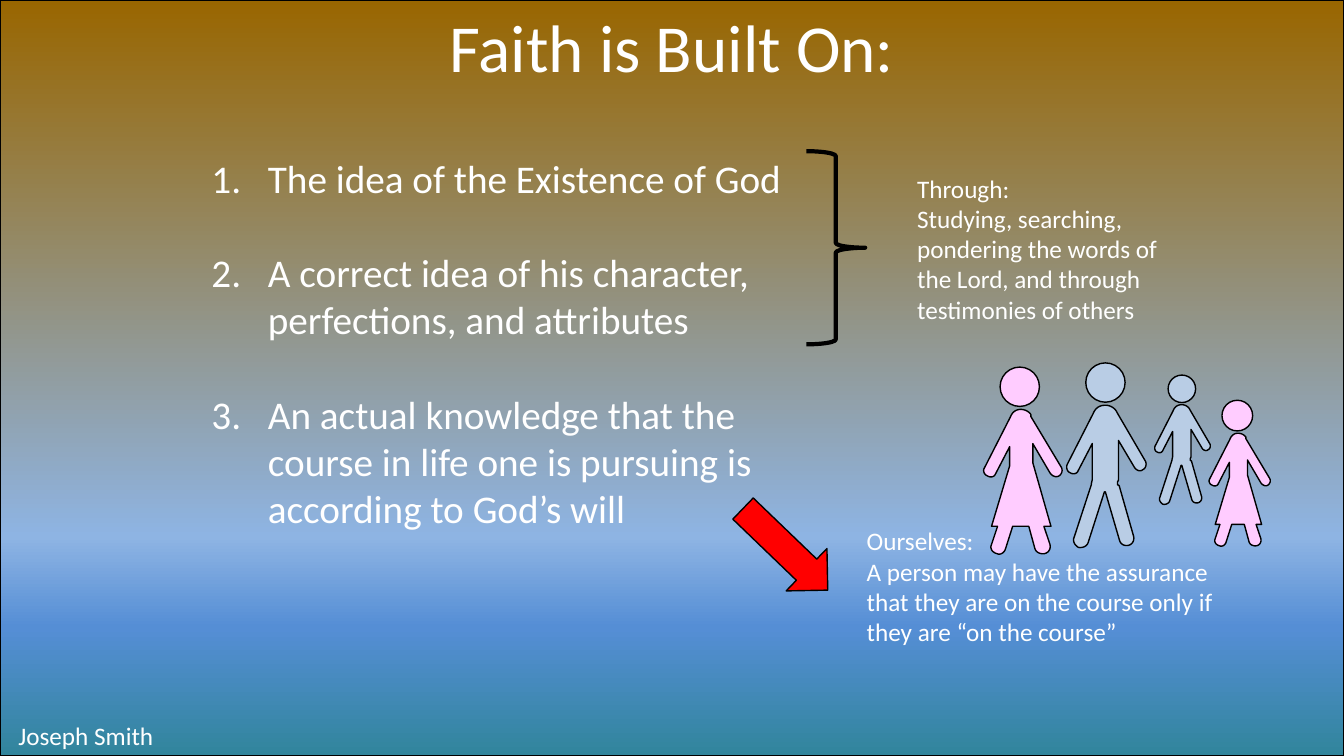
"""Build the slide on what faith is built on, laid out on a grid of 160 by 90 cells."""
from dataclasses import dataclass

from lxml.etree import SubElement
from pptx import Presentation
from pptx.dml.color import RGBColor
from pptx.enum.shapes import MSO_SHAPE
from pptx.enum.text import PP_ALIGN
from pptx.oxml.ns import qn
from pptx.shapes.autoshape import Shape
from pptx.shapes.shapetree import GroupShapes, SlideShapes
from pptx.util import Emu, Inches, Pt

COLS, ROWS = 160, 90
CELL = Inches(7.5) / ROWS
UNIT = 0.12
STEPS = 8
FONT = "Calibri"

WHITE = RGBColor(0xFF, 0xFF, 0xFF)
BLACK = RGBColor(0x00, 0x00, 0x00)
RED = RGBColor(0xFF, 0x00, 0x00)
PINK = RGBColor(0xFF, 0xCC, 0xFF)
PALE = RGBColor(0xB9, 0xCD, 0xE5)
BROWN = RGBColor(0x99, 0x66, 0x00)
SKY = RGBColor(0x8E, 0xB4, 0xE3)
BLUE = RGBColor(0x55, 0x8E, 0xD5)
TEAL = RGBColor(0x31, 0x85, 0x9C)
STOPS = ((0, BROWN), (71, SKY), (83, BLUE), (100, TEAL))

Outline = tuple[tuple[int, ...], ...]
Point = tuple[float, float]

MALE: Outline = (
    (0, 42), (5, 42, 10, 45, 12, 50), (40, 98),
    (41, 101, 40, 105, 37, 106), (35, 108, 31, 107, 29, 104),
    (13, 77), (13, 115), (13, 116, 13, 117, 12, 118), (12, 121),
    (13, 121, 14, 122, 14, 123), (28, 172),
    (29, 176, 27, 180, 23, 181), (19, 182, 15, 180, 14, 176),
    (0, 128), (-1, 128), (-17, 178),
    (-18, 182, -23, 184, -27, 183), (-30, 181, -33, 177, -31, 173),
    (-14, 121), (-14, 119, -13, 117, -13, 115), (-13, 80), (-27, 107),
    (-28, 110, -32, 111, -35, 109), (-38, 108, -39, 104, -38, 101),
    (-13, 52), (-12, 50), (-10, 45, -6, 42, 0, 42),
)
FEMALE: Outline = (
    (1, 42), (5, 42, 9, 44, 11, 47), (11, 49), (41, 99),
    (43, 102, 42, 106, 39, 108), (36, 110, 32, 108, 30, 105),
    (13, 76), (13, 95), (31, 158), (24, 158), (30, 176),
    (31, 180, 29, 184, 25, 185), (21, 186, 16, 184, 15, 180),
    (9, 158), (-7, 158), (-14, 180),
    (-15, 184, -19, 187, -23, 185), (-27, 184, -30, 180, -28, 176),
    (-22, 158), (-28, 158), (-10, 98), (-10, 79), (-24, 106),
    (-25, 109, -29, 110, -32, 108), (-35, 107, -37, 103, -35, 100),
    (-10, 51), (-9, 49), (-7, 44, -3, 42, 1, 42),
)


@dataclass(frozen=True)
class Box:
    col: float
    row: float
    wide: float
    high: float

    def place(self) -> tuple[Emu, Emu, Emu, Emu]:
        left, top, width, height = (
            Emu(round(part * CELL))
            for part in (self.col, self.row, self.wide, self.high)
        )
        return left, top, width, height


@dataclass(frozen=True)
class Note:
    box: Box
    lines: tuple[str, ...]
    size: int = 18
    align: PP_ALIGN = PP_ALIGN.LEFT
    wrap: bool = True
    listed: bool = False


@dataclass(frozen=True)
class Person:
    col: float
    row: float
    scale: float
    body: Outline
    color: RGBColor


TITLE = Note(Box(20, 0, 120, 10.9), ("Faith is Built On:",), 48, PP_ALIGN.CENTER)
POINTS = Note(
    Box(24, 17.75, 72, 46.4),
    (
        "The idea of the Existence of God",
        "A correct idea of his character, perfections, and attributes",
        "An actual knowledge that the course in life one is pursuing is "
        "according to God’s will",
    ),
    28,
    listed=True,
)
NOTES = (
    Note(
        Box(108, 20, 32, 19.4),
        (
            "Through:",
            "Studying, searching, pondering the words of the Lord, "
            "and through testimonies of others",
        ),
    ),
    Note(
        Box(102, 62, 45, 15.7),
        (
            "Ourselves:",
            "A person may have the assurance that they are on the course "
            "only if they are “on the course”",
        ),
    ),
    Note(Box(1, 85.2, 18.7, 4.8), ("Joseph Smith",), wrap=False),
)
PEOPLE = (
    Person(131.6, 43.2, 1, MALE, PALE),
    Person(121.4, 43.7, 1, FEMALE, PINK),
    Person(140.7, 44.65, 0.7, MALE, PALE),
    Person(147.3, 47.65, 0.78, FEMALE, PINK),
)


def style(shape: Shape, color: RGBColor | None, weight: float = 1) -> None:
    shape.shadow.inherit = False
    shape.line.color.rgb = BLACK
    shape.line.width = Pt(weight)
    if color is None:
        shape.fill.background()
    else:
        shape.fill.solid()
        shape.fill.fore_color.rgb = color


def shade(shape: Shape) -> None:
    shape.fill.gradient()
    shape.fill.gradient_angle = 270
    stops = shape._element.spPr.find(qn("a:gradFill")).find(qn("a:gsLst"))
    stops.clear()
    for share, color in STOPS:
        stop = SubElement(stops, qn("a:gs"), pos=str(share * 1000))
        SubElement(stop, qn("a:srgbClr"), val=str(color))


def write(shapes: SlideShapes, note: Note) -> None:
    frame = shapes.add_textbox(*note.box.place()).text_frame
    frame.word_wrap = note.wrap
    frame.text = "\n".join(note.lines)
    for line in frame.paragraphs:
        line.alignment = note.align
        line.font.name = FONT
        line.font.size = Pt(note.size)
        line.font.color.rgb = WHITE
        if note.listed:
            line.space_after = Pt(34)
            props = line._p.get_or_add_pPr()
            indent = Inches(0.56)
            props.set("marL", str(indent))
            props.set("indent", str(-indent))
            SubElement(props, qn("a:buFont"), typeface="+mj-lt")
            SubElement(props, qn("a:buAutoNum"), type="arabicPeriod")


def trace(body: Outline) -> list[Point]:
    spots: list[Point] = []
    for part in body:
        if len(part) == 2:
            spots.append((part[0], part[1]))
            continue
        ends = (spots[-1], part[:2], part[2:4], part[4:])
        for step in range(1, STEPS + 1):
            t = step / STEPS
            blend = ((1 - t) ** 3, 3 * t * (1 - t) ** 2, 3 * t * t * (1 - t), t**3)
            spots.append((
                sum(b * end[0] for b, end in zip(blend, ends)),
                sum(b * end[1] for b, end in zip(blend, ends)),
            ))
    return spots


def stand(shapes: GroupShapes, who: Person) -> None:
    unit = UNIT * who.scale
    spots = [
        ((who.col + x * unit) * CELL, (who.row + y * unit) * CELL)
        for x, y in trace(who.body)
    ]
    pen = shapes.build_freeform(*spots[0])
    pen.add_line_segments(spots[1:], close=True)
    style(pen.convert_to_shape(), who.color)
    wide = 39 * unit
    head = Box(who.col - wide / 2, who.row, wide, wide)
    style(shapes.add_shape(MSO_SHAPE.OVAL, *head.place()), who.color)


def main() -> None:
    deck = Presentation()
    deck.slide_width, deck.slide_height = Emu(round(COLS * CELL)), Emu(round(ROWS * CELL))
    shapes = deck.slides.add_slide(deck.slide_layouts[6]).shapes
    back = shapes.add_shape(MSO_SHAPE.RECTANGLE, *Box(0, 0, COLS, ROWS).place())
    style(back, None)
    shade(back)
    write(shapes, TITLE)
    write(shapes, POINTS)
    arrow = shapes.add_shape(MSO_SHAPE.RIGHT_ARROW, *Box(86.5, 61.9, 14, 7).place())
    arrow.rotation = 43.9
    style(arrow, RED)
    brace = shapes.add_shape(MSO_SHAPE.RIGHT_BRACE, *Box(96, 18, 7, 23).place())
    style(brace, None, 3)
    for note in NOTES:
        write(shapes, note)
    for who in PEOPLE:
        stand(shapes.add_group_shape().shapes, who)
    deck.save("out.pptx")


if __name__ == "__main__":
    main()
